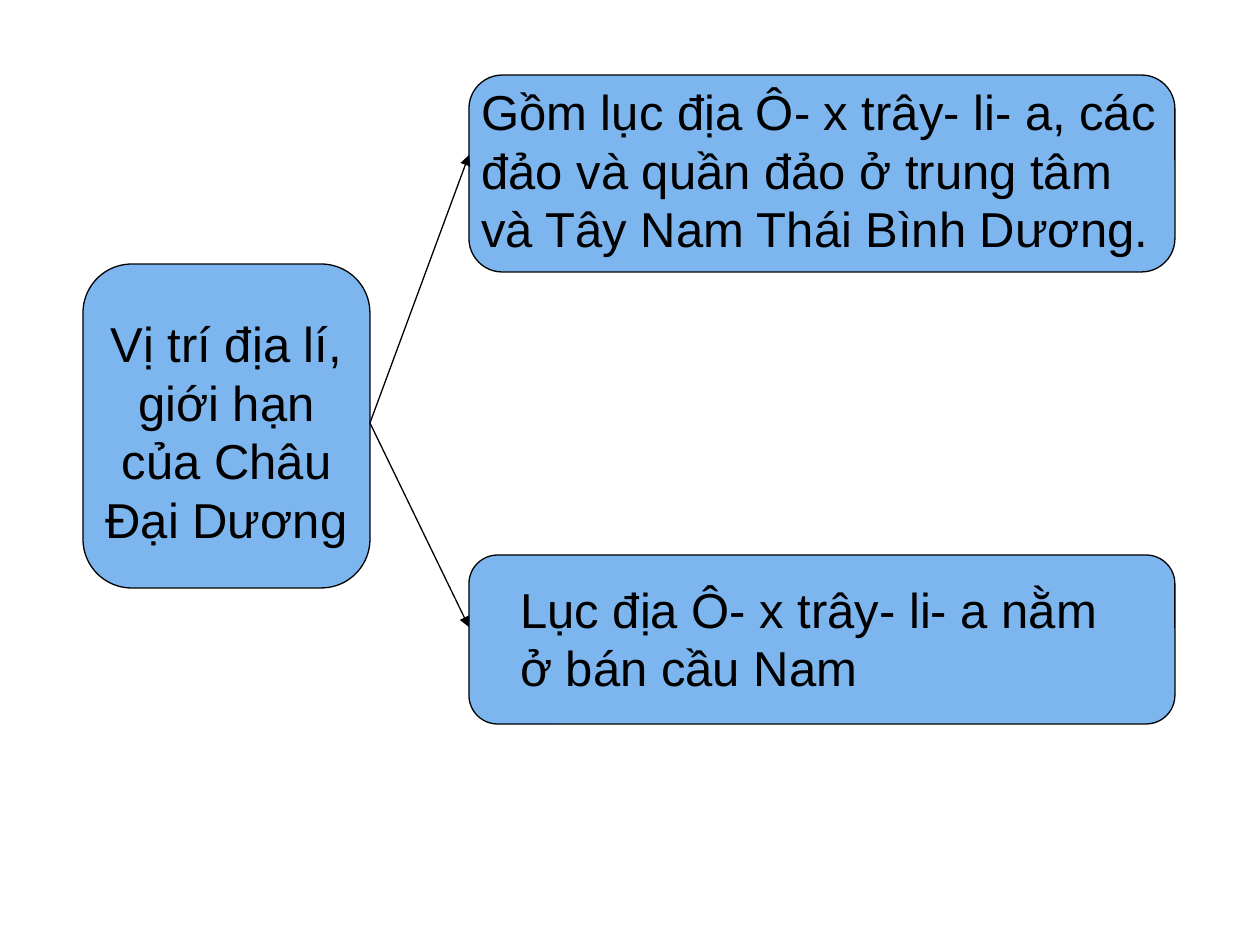
from lxml import etree
from pptx import Presentation
from pptx.dml.color import RGBColor
from pptx.enum.shapes import MSO_CONNECTOR, MSO_SHAPE
from pptx.enum.text import MSO_AUTO_SIZE, PP_ALIGN
from pptx.oxml.ns import qn
from pptx.util import Pt

BLACK = RGBColor(0x00, 0x00, 0x00)
BLUE = RGBColor(0x7D, 0xB6, 0xEF)
ROUNDED = MSO_SHAPE.ROUNDED_RECTANGLE
STRAIGHT = MSO_CONNECTOR.STRAIGHT
FIT_SHAPE = MSO_AUTO_SIZE.SHAPE_TO_FIT_TEXT
LEFT = PP_ALIGN.LEFT
CENTER = PP_ALIGN.CENTER
PX = 914400 // 126


class Diagram:
    font_name = "Arial"
    font_size = Pt(28)
    line_width = Pt(0.75)

    def __init__(self, page):
        self.page = page

    def panel(self, left, top, width, height):
        shape = self.page.shapes.add_shape(
            ROUNDED, left * PX, top * PX, width * PX, height * PX)
        shape.shadow.inherit = False
        shape.adjustments[0] = 0.17
        shape.fill.solid()
        shape.fill.fore_color.rgb = BLUE
        self.outline(shape)

    def label(self, text, left, top, width, height, align=LEFT):
        box = self.page.shapes.add_textbox(
            left * PX, top * PX, width * PX, height * PX)
        frame = box.text_frame
        frame.word_wrap = True
        frame.auto_size = FIT_SHAPE
        para = frame.paragraphs[0]
        para.text = text
        para.alignment = align
        para.font.name = self.font_name
        para.font.size = self.font_size
        para.font.color.rgb = BLACK

    def arrow(self, start, end):
        connector = self.page.shapes.add_connector(
            STRAIGHT, *(value * PX for value in start + end))
        self.outline(connector)
        line = connector.line._get_or_add_ln()
        etree.SubElement(line, qn("a:tailEnd"), type="triangle")
        etree.SubElement(connector._element.spPr, qn("a:effectLst"))

    def outline(self, shape):
        shape.line.color.rgb = BLACK
        shape.line.width = self.line_width


def main():
    deck = Presentation()
    deck.slide_width = 1260 * PX
    deck.slide_height = 945 * PX
    diagram = Diagram(deck.slides.add_slide(deck.slide_layouts[6]))

    topic_left, topic_width = 83, 287
    detail_left, detail_width = 469, 706

    diagram.panel(topic_left, 264, topic_width, 324)
    diagram.label("Vị trí địa lí, giới hạn của Châu Đại Dương",
                  topic_left, 307, topic_width, 248, CENTER)

    diagram.panel(detail_left, 75, detail_width, 197)
    diagram.label("Gồm lục địa Ô- x trây- li- a, các đảo và quần đảo "
                  "ở trung tâm và Tây Nam Thái Bình Dương.",
                  detail_left, 75, detail_width, 189)

    diagram.panel(detail_left, 555, detail_width, 169)
    diagram.label("Lục địa Ô- x trây- li- a nằm ở bán cầu Nam",
                  508, 573, 612, 130)

    for arrow_end in (155, 627):
        diagram.arrow((topic_left + topic_width, 423), (detail_left, arrow_end))

    deck.save("out.pptx")


if __name__ == "__main__":
    main()
